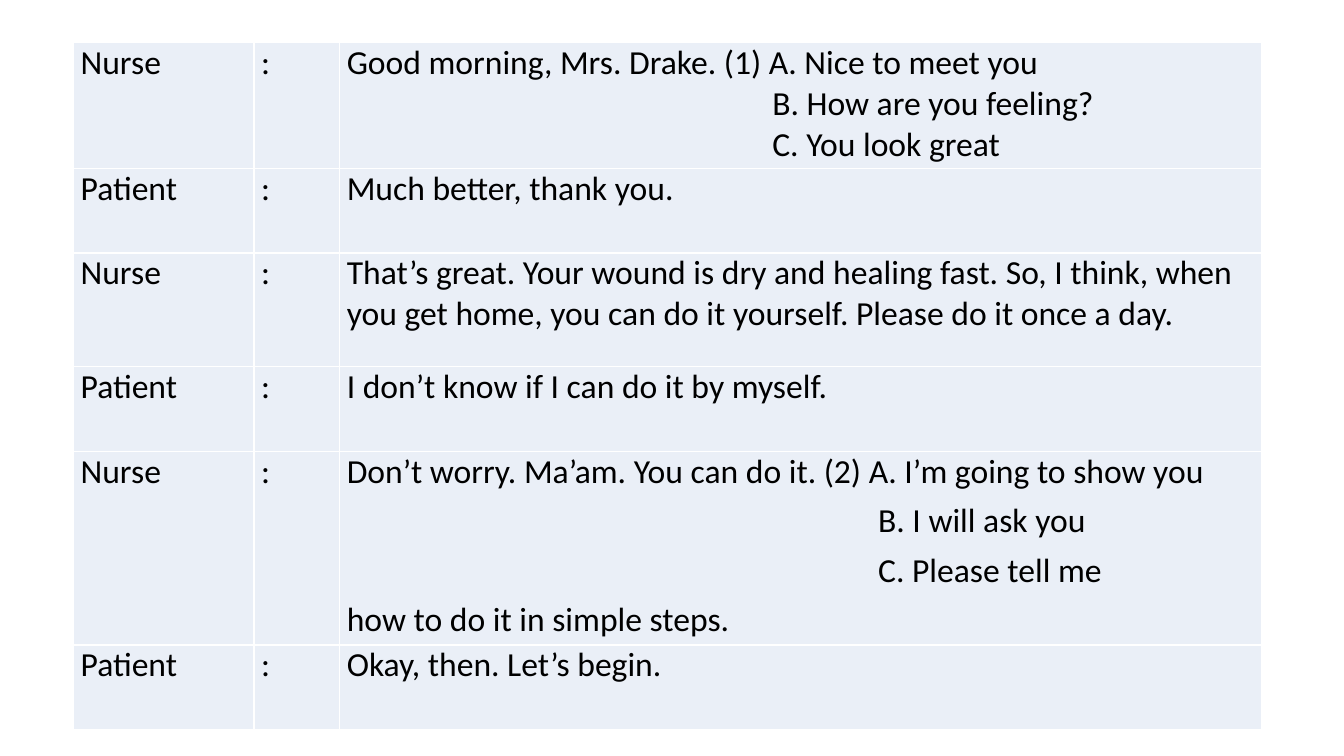
from lxml.etree import SubElement
from pptx import Presentation
from pptx.dml.color import RGBColor
from pptx.oxml.ns import qn
from pptx.util import Inches, Pt

# Each line is (left indent in inches, text); the last field is line spacing in points.
TALK = [
    ("Nurse", [(0, "Good morning, Mrs. Drake. (1) A. Nice to meet you"),
               (4.22, "B. How are you feeling?"),
               (4.22, "C. You look great")], 0),
    ("Patient", [(0, "Much better, thank you.")], 0),
    ("Nurse", [(0, "That’s great. Your wound is dry and healing fast. So, I think, when "
                   "you get home, you can do it yourself. Please do it once a day.")], 3),
    ("Patient", [(0, "I don’t know if I can do it by myself.")], 3),
    ("Nurse", [(0, "Don’t worry. Ma’am. You can do it. (2) A. I’m going to show you"),
               (5.27, "B. I will ask you"),
               (5.27, "C. Please tell me"),
               (0, "how to do it in simple steps.")], 3),
    ("Patient", [(0, "Okay, then. Let’s begin.")], 3),
]
WIDTHS = [1.79, 0.85, 9.14]
HEIGHTS = [1.25, 0.84, 1.13, 0.84, 1.92, 0.84]
LEFT, TOP = 0.73, 0.42

THEME = {"font": "Calibri", "size": 24, "text": "000000",
         "fill": "EAEFF7", "line": "FFFFFF", "rule": 1}
INSETS = {"margin_left": Inches(0.07), "margin_right": Inches(0.07),
          "margin_top": 0, "margin_bottom": 0}
FONT = {"name": THEME["font"], "size": Pt(THEME["size"]), "bold": False}
FLAGS = {"first_row": False, "horz_banding": False}


def apply(item, values):
    for key, value in values.items():
        setattr(item, key, value)


def border(cell):
    props = cell._tc.get_or_add_tcPr()
    for side in ("a:lnL", "a:lnR", "a:lnT", "a:lnB"):
        line = SubElement(props, qn(side), w=str(Pt(THEME["rule"])))
        paint = SubElement(line, qn("a:solidFill"))
        SubElement(paint, qn("a:srgbClr"), val=THEME["line"])


def write(cell, lines, gap):
    apply(cell, INSETS)
    border(cell)
    cell.fill.solid()
    cell.fill.fore_color.rgb = RGBColor.from_string(THEME["fill"])
    frame = cell.text_frame
    for i, (indent, text) in enumerate(lines):
        para = frame.add_paragraph() if i else frame.paragraphs[0]
        apply(para, {"space_before": Pt(gap), "space_after": Pt(gap)})
        if indent:
            para._p.get_or_add_pPr().set("marL", str(Inches(indent)))
        run = para.add_run()
        run.text = text
        apply(run.font, FONT)
        run.font.color.rgb = RGBColor.from_string(THEME["text"])


def main():
    deck = Presentation()
    apply(deck, {"slide_width": Inches(13.33), "slide_height": Inches(7.5)})
    slide = deck.slides.add_slide(deck.slide_layouts[6])
    table = slide.shapes.add_table(
        len(TALK), len(WIDTHS), Inches(LEFT), Inches(TOP),
        Inches(sum(WIDTHS)), Inches(sum(HEIGHTS))).table
    apply(table, FLAGS)
    for col, width in zip(table.columns, WIDTHS):
        col.width = Inches(width)
    for row, height, (who, lines, gap) in zip(table.rows, HEIGHTS, TALK):
        row.height = Inches(height)
        name, colon, speech = row.cells
        write(name, [(0, who)], 3)
        write(colon, [(0, ":")], 3)
        write(speech, lines, gap)
    deck.save("out.pptx")


if __name__ == "__main__":
    main()
